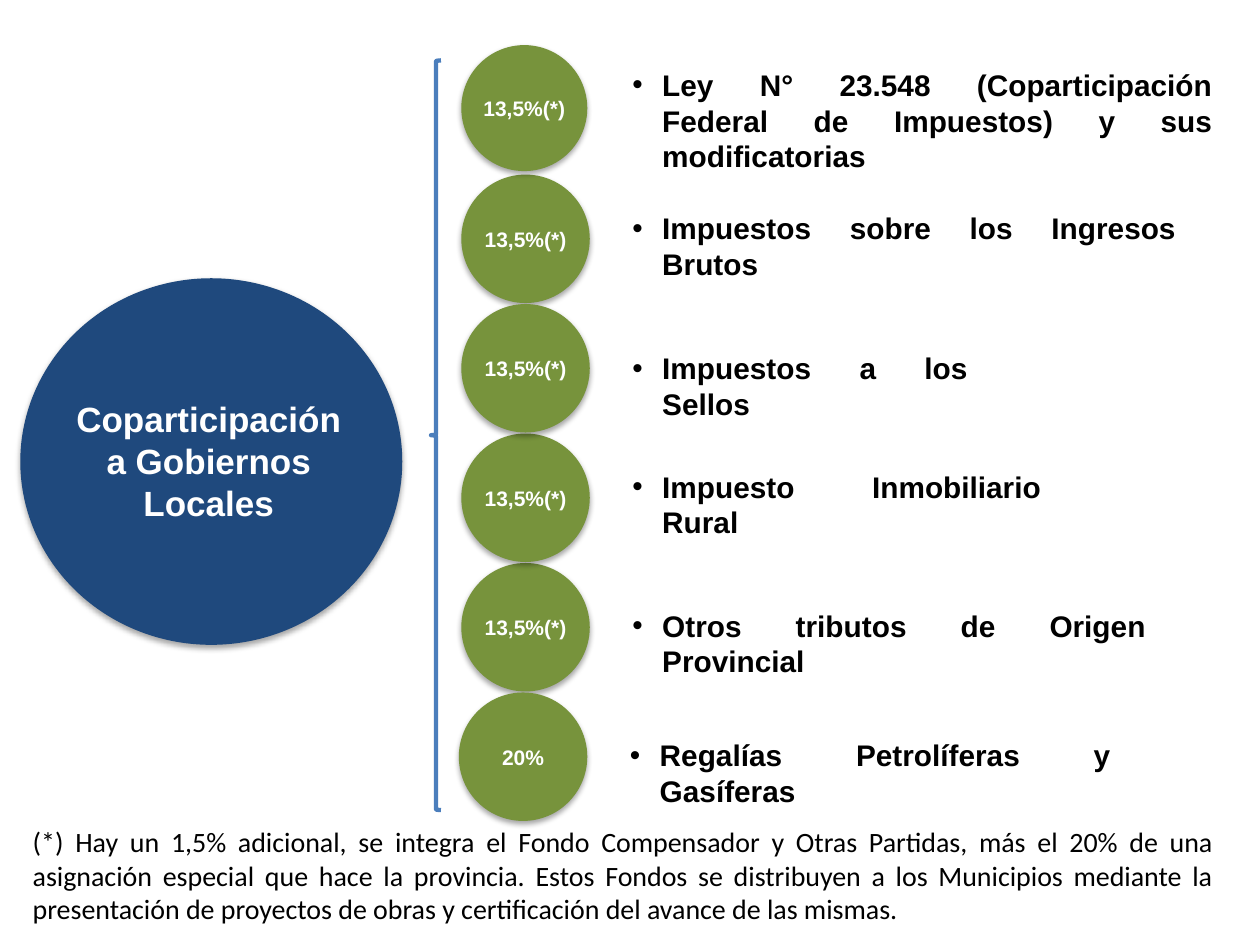
from lxml import etree
from pptx import Presentation
from pptx.dml.color import RGBColor
from pptx.enum.shapes import MSO_SHAPE as Shape
from pptx.enum.text import MSO_ANCHOR as Anchor, PP_ALIGN as Align
from pptx.oxml import parse_xml
from pptx.oxml.ns import nsdecls, qn
from pptx.util import Cm, Pt

NAVY, GREEN, BLUE = "1F497D", "77933C", "4B7EBC"
WHITE, BLACK = "FFFFFF", "000000"

FIRST_TOP, PITCH = 0.91, 2.61

# Row position, share, tax, text left, text top, text width (back to front)
BACK_ROWS = [
    (1, "13,5%(*)", "Impuestos sobre los Ingresos Brutos", 12.5, 4.11, 11.46),
    (4, "13,5%(*)", "Otros tributos de Origen Provincial", 12.5, 12.12, 10.85),
    (3, "13,5%(*)", "Impuesto Inmobiliario Rural", 12.5, 9.32, 8.74),
    (2, "13,5%(*)", "Impuestos a los Sellos", 12.5, 6.93, 7.26),
    (0, "13,5%(*)", "Ley N° 23.548 (Coparticipación Federal de Impuestos) "
     "y sus modificatorias", 12.5, 1.22, 12.19),
]
FRONT_ROW = (5, "20%", "Regalías Petrolíferas y Gasíferas", 12.45, 14.73, 10.19)

FOOTNOTE = (
    "(*) Hay un 1,5% adicional, se integra el Fondo Compensador y Otras "
    "Partidas, más el 20% de una asignación especial que hace la provincia. "
    "Estos Fondos se distribuyen a los Municipios mediante la presentación de "
    "proyectos de obras y certificación del avance de las mismas."
)


def color(value):
    return RGBColor.from_string(value)


def write_text(shape, text, size, font="Arial", fill=BLACK, bold=True,
               align=Align.JUSTIFY, bullet=False):
    frame = shape.text_frame
    frame.word_wrap = True
    paragraph = frame.paragraphs[0]
    paragraph.alignment = align
    if bullet:
        properties = paragraph._p.get_or_add_pPr()
        properties.set("marL", str(Cm(0.6)))
        properties.set("indent", str(-Cm(0.6)))
        bullet_font = etree.SubElement(properties, qn("a:buFont"))
        bullet_font.set("typeface", "Arial")
        etree.SubElement(properties, qn("a:buChar")).set("char", "•")
    run = paragraph.add_run()
    run.text = text
    run.font.name = font
    run.font.size = Pt(size)
    run.font.bold = bold
    run.font.color.rgb = color(fill)


def add_text(slide, text, left, top, width, height, **text_format):
    box = slide.shapes.add_textbox(Cm(left), Cm(top), Cm(width), Cm(height))
    write_text(box, text, **text_format)


def add_shadow(shape):
    shape._element.spPr.append(parse_xml(
        f'<a:effectLst {nsdecls("a")}>'
        '<a:outerShdw blurRad="40000" dist="23000" dir="5400000" rotWithShape="0">'
        '<a:srgbClr val="000000"><a:alpha val="35000"/></a:srgbClr>'
        '</a:outerShdw></a:effectLst>'))


def add_circle(slide, text, left, top, width, height, fill, size,
               insets=(0, 0, 0, 0)):
    circle = slide.shapes.add_shape(
        Shape.OVAL, Cm(left), Cm(top), Cm(width), Cm(height))
    circle.fill.solid()
    circle.fill.fore_color.rgb = color(fill)
    circle.line.fill.background()
    add_shadow(circle)
    frame = circle.text_frame
    frame.vertical_anchor = Anchor.MIDDLE
    (frame.margin_left, frame.margin_top,
     frame.margin_right, frame.margin_bottom) = map(Cm, insets)
    write_text(circle, text, size=size, fill=WHITE, align=Align.CENTER)


def add_brace(slide, left, top, width, height):
    brace = slide.shapes.add_shape(
        Shape.LEFT_BRACE, Cm(left), Cm(top), Cm(width), Cm(height))
    brace.shadow.inherit = False
    brace.fill.background()
    brace.line.color.rgb = color(BLUE)
    brace.line.width = Pt(2.5)


def add_row(slide, position, share, tax, left, top, width):
    add_text(slide, tax, left, top, width, 1.7, size=17, bullet=True)
    diameter = 2.54 if position == 0 else 2.59
    circle_left = 9.25 if position == 5 else 9.3
    add_circle(slide, share, circle_left, FIRST_TOP + PITCH * position,
               diameter, diameter, GREEN, 12)


def main():
    presentation = Presentation()
    presentation.slide_width = Cm(25.4)
    presentation.slide_height = Cm(19.05)
    slide = presentation.slides.add_slide(presentation.slide_layouts[6])

    # Brace and the shares it groups
    add_brace(slide, 8.69, 1.22, 0.2, 15.11)
    for row in BACK_ROWS:
        add_row(slide, *row)

    # Main concept
    add_circle(slide, "Coparticipación a Gobiernos Locales",
               0.41, 5.61, 7.7, 7.39, NAVY, 20, insets=(0, 0.1, 0.1, 0.13))
    add_row(slide, *FRONT_ROW)

    # Footnote
    add_text(slide, FOOTNOTE, 0.41, 16.5, 24.31, 2.32,
             size=16, font="Calibri", bold=False)

    presentation.save("out.pptx")


if __name__ == "__main__":
    main()
